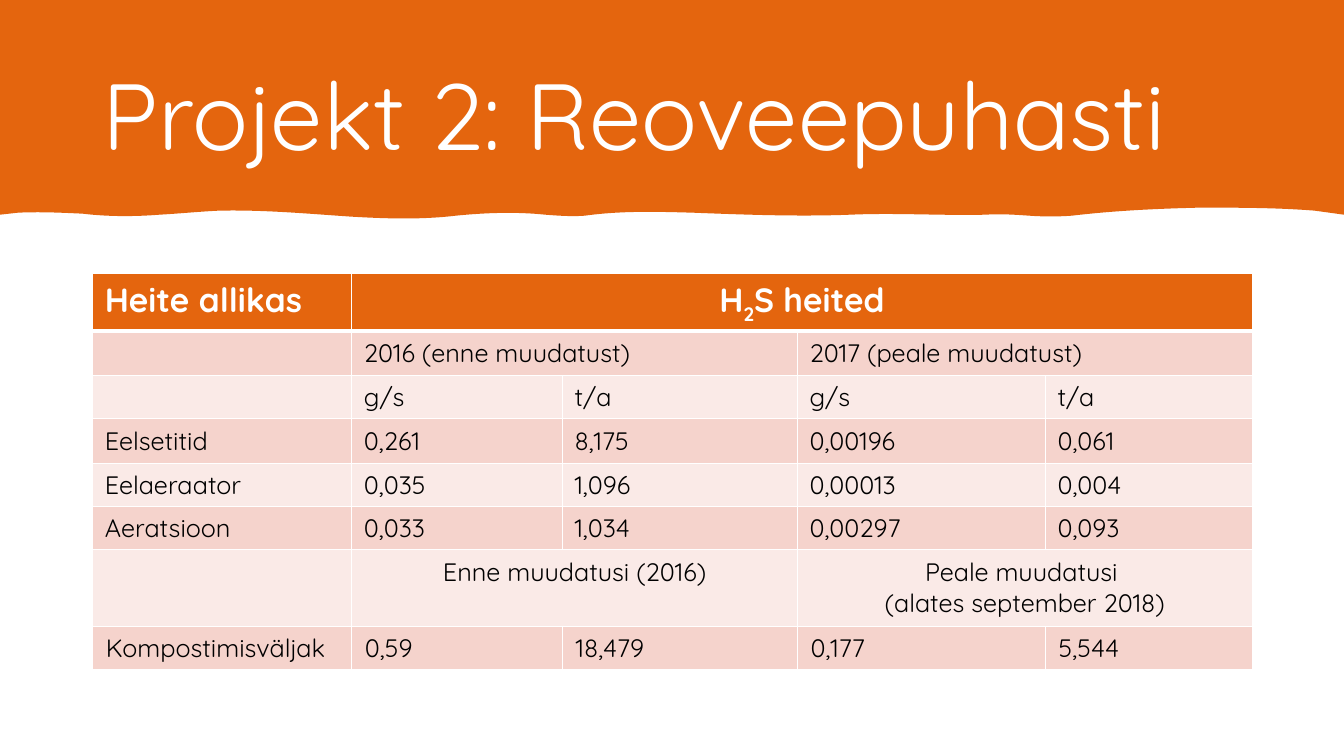
from dataclasses import dataclass

from lxml import etree
from pptx import Presentation
from pptx.dml.color import RGBColor
from pptx.enum.text import MSO_ANCHOR, PP_ALIGN
from pptx.oxml.ns import qn
from pptx.util import Inches, Pt

LEFT, CENTER = PP_ALIGN.LEFT, PP_ALIGN.CENTER
MIDDLE = MSO_ANCHOR.MIDDLE
FONT = "Quicksand"
ORANGE, ROSE, BLUSH = "E4650E", "F5D3CC", "FAEAE7"
WHITE, BLACK = "FFFFFF", "000000"
SLIDE_WIDTH, SLIDE_HEIGHT = 13.33, 7.5
COLUMN_WIDTHS = [2.57, 2.09, 2.33, 2.46, 2.05]

Point = tuple[float, float]


@dataclass
class Entry:
    text: str
    span: int = 1
    align: PP_ALIGN = LEFT


@dataclass
class Row:
    height: float
    entries: list[Entry]
    side_inset: float = 0.12


@dataclass
class Wave:
    control1: Point
    control2: Point
    end: Point


def values(*texts: str) -> list[Entry]:
    return [Entry(text) for text in texts]


ROWS = [
    Row(0.57, [Entry("Heite allikas"), Entry("H2S heited", 4, CENTER)]),
    Row(0.44, [Entry(""), Entry("2016 (enne muudatust)", 2),
               Entry("2017 (peale muudatust)", 2)]),
    Row(0.43, values("", "g/s", "t/a", "g/s", "t/a")),
    Row(0.44, values("Eelsetitid", "0,261", "8,175", "0,00196", "0,061")),
    Row(0.43, values("Eelaeraator", "0,035", "1,096", "0,00013", "0,004")),
    Row(0.43, values("Aeratsioon", "0,033", "1,034", "0,00297", "0,093")),
    Row(0.76, [Entry(""), Entry("Enne muudatusi (2016)", 2, CENTER),
               Entry("Peale muudatusi \n(alates september 2018)", 2, CENTER)], 0.13),
    Row(0.43, values("Kompostimisväljak", "0,59", "18,479", "0,177", "5,544"), 0.13),
]

BANNER_EDGE = [(SLIDE_WIDTH, 0), (SLIDE_WIDTH, 2.13), (13.04, 2.09)]
BANNER_END = (0, 2.13)
WAVES = [
    Wave((12.66, 2.06), (12.28, 2.06), (11.9, 2.06)),
    Wave((11.48, 2.07), (11.05, 2.09), (10.63, 2.14)),
    Wave((10.49, 2.15), (10.35, 2.15), (10.21, 2.14)),
    Wave((10.07, 2.13), (9.92, 2.12), (9.77, 2.13)),
    Wave((9.33, 2.14), (8.88, 2.11), (8.43, 2.13)),
    Wave((7.91, 2.15), (7.39, 2.13), (6.87, 2.11)),
    Wave((6.51, 2.1), (6.16, 2.09), (5.8, 2.14)),
    Wave((5.67, 2.15), (5.54, 2.14), (5.41, 2.13)),
    Wave((5.12, 2.1), (4.82, 2.11), (4.52, 2.14)),
    Wave((4.18, 2.18), (3.84, 2.17), (3.49, 2.15)),
    Wave((3.05, 2.12), (2.61, 2.08), (2.17, 2.09)),
    Wave((1.97, 2.1), (1.77, 2.12), (1.58, 2.13)),
    Wave((1.33, 2.15), (1.07, 2.15), (0.82, 2.12)),
    Wave((0.61, 2.11), (0.4, 2.1), (0.18, 2.11)),
]


def color(hex_code: str) -> RGBColor:
    return RGBColor.from_string(hex_code)


def paint(target, hex_code: str) -> None:
    target.fill.solid()
    target.fill.fore_color.rgb = color(hex_code)


def style_run(run, size: float, hex_code: str, bold: bool = False) -> None:
    run.font.name = FONT
    run.font.size = Pt(size)
    run.font.bold = bold
    run.font.color.rgb = color(hex_code)


def curve_segments(freeform, first: int, count: int) -> None:
    segments = list(freeform._element.iter(qn("a:lnTo")))
    for start in range(first, first + 3 * count, 3):
        control1, control2, end = segments[start:start + 3]
        control1.tag = qn("a:cubicBezTo")
        for segment in (control2, end):
            control1.append(segment[0])
            segment.getparent().remove(segment)


def draw_banner(slide) -> None:
    outline = list(BANNER_EDGE)
    for wave in WAVES:
        outline += [wave.control1, wave.control2, wave.end]
    outline.append(BANNER_END)
    builder = slide.shapes.build_freeform(0, 0)
    builder.add_line_segments([(Inches(x), Inches(y)) for x, y in outline], close=True)
    banner = builder.convert_to_shape()
    curve_segments(banner, len(BANNER_EDGE), len(WAVES))
    paint(banner, ORANGE)
    banner.line.fill.background()
    banner.shadow.inherit = False


def draw_title(slide) -> None:
    title = slide.shapes.add_textbox(Inches(0.92), Inches(0.4), Inches(11.5), Inches(1.45))
    frame = title.text_frame
    frame.word_wrap = True
    frame.vertical_anchor = MIDDLE
    frame.text = "Projekt 2: Reoveepuhasti"
    style_run(frame.paragraphs[0].runs[0], 67, WHITE)


def add_borders(cell, widths: dict[str, float]) -> None:
    properties = cell._tc.get_or_add_tcPr()
    for side, width in widths.items():
        line = etree.SubElement(properties, qn(f"a:ln{side}"), w=str(Pt(width)))
        fill = etree.SubElement(line, qn("a:solidFill"))
        etree.SubElement(fill, qn("a:srgbClr"), val=WHITE)


def write_entry(cell, entry: Entry, side_inset: float, header: bool) -> None:
    cell.margin_left = cell.margin_right = Inches(side_inset)
    cell.margin_top = cell.margin_bottom = Inches(0.06)
    cell.text_frame.text = entry.text
    for paragraph in cell.text_frame.paragraphs:
        paragraph.alignment = entry.align
        if entry.text.startswith("H2S"):
            paragraph.text = "H"
            for part in ("2", "S heited"):
                paragraph.add_run().text = part
            paragraph.runs[1]._r.get_or_add_rPr().set("baseline", "-25000")
        for run in paragraph.runs:
            style_run(run, 24 if header else 18, WHITE if header else BLACK, header)


def draw_emissions(slide) -> None:
    table = slide.shapes.add_table(
        len(ROWS), len(COLUMN_WIDTHS), Inches(0.92), Inches(2.71),
        Inches(sum(COLUMN_WIDTHS)), Inches(sum(row.height for row in ROWS))).table
    for column, width in zip(table.columns, COLUMN_WIDTHS):
        column.width = Inches(width)
    for index, row in enumerate(ROWS):
        header = index == 0
        table.rows[index].height = Inches(row.height)
        top = 3 if index == 1 else 1
        bottom = 3 if header else 1
        band = ORANGE if header else ROSE if index % 2 else BLUSH
        for cell in table.rows[index].cells:
            add_borders(cell, {"L": 1, "R": 1, "T": top, "B": bottom})
            paint(cell, band)
        start = 0
        for entry in row.entries:
            cell = table.cell(index, start)
            if entry.span > 1:
                cell.merge(table.cell(index, start + entry.span - 1))
            write_entry(cell, entry, row.side_inset, header)
            start += entry.span


def main() -> None:
    presentation = Presentation()
    presentation.slide_width = Inches(SLIDE_WIDTH)
    presentation.slide_height = Inches(SLIDE_HEIGHT)
    slide = presentation.slides.add_slide(presentation.slide_layouts[6])
    paint(slide.background, WHITE)
    draw_banner(slide)
    draw_title(slide)
    draw_emissions(slide)
    presentation.save("out.pptx")


if __name__ == "__main__":
    main()
